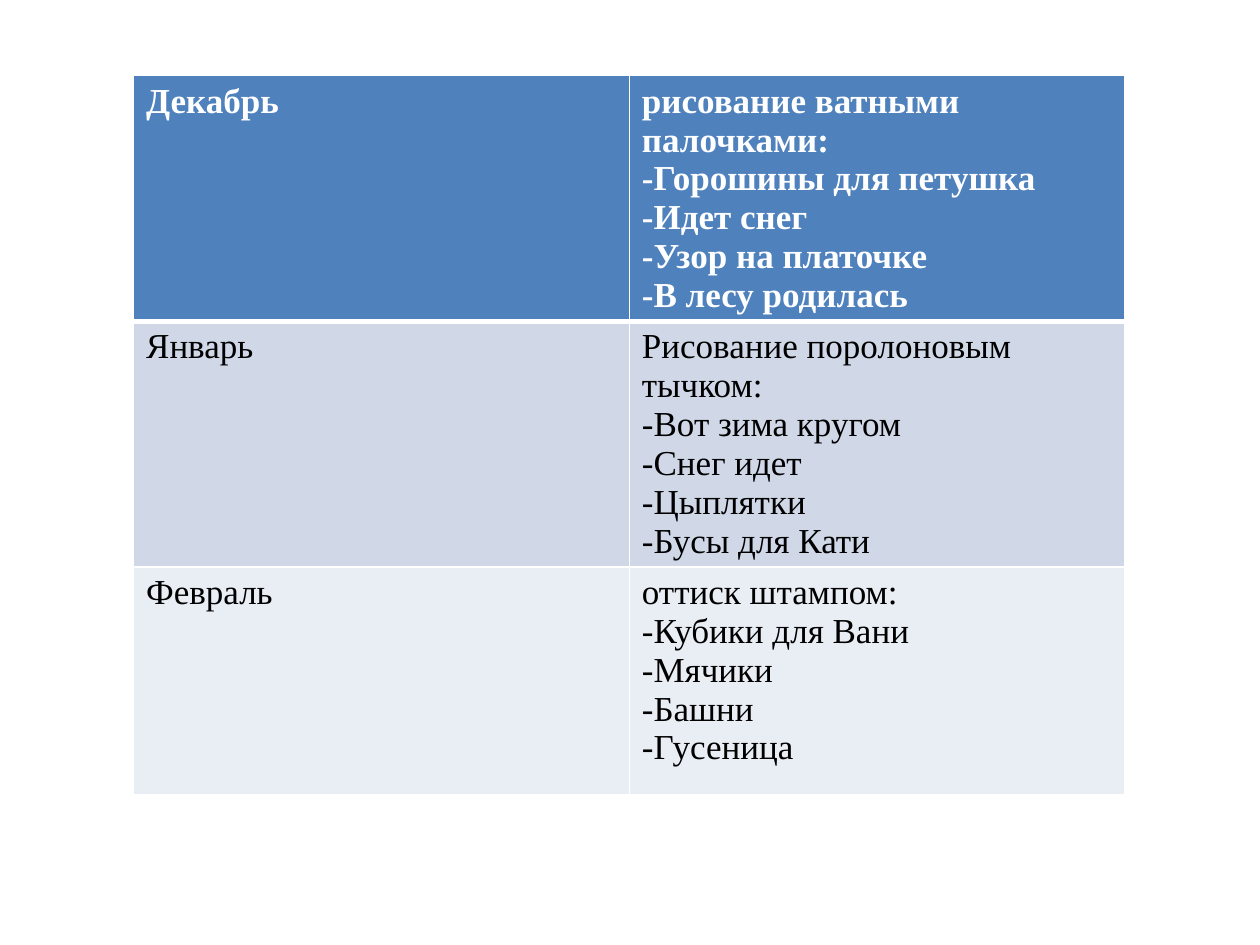
from lxml import etree
from pptx import Presentation
from pptx import util as u
from pptx.dml.color import RGBColor
from pptx.oxml.ns import qn

WHITE = RGBColor(0xFF, 0xFF, 0xFF)
BLACK = RGBColor(0x00, 0x00, 0x00)
HEADER_BLUE = RGBColor(0x4F, 0x81, 0xBD)
BAND_DARK = RGBColor(0xD0, 0xD8, 0xE8)
BAND_LIGHT = RGBColor(0xE9, 0xED, 0xF4)

BASE_FONT = {"name": "Times New Roman", "size": u.Pt(20)}
THIN, THICK = 1, 3

# Month, technique with its drawing topics
MONTH_PLAN = [
    ("Декабрь", ["рисование ватными палочками:", "-Горошины для петушка",
                 "-Идет снег", "-Узор на платочке", "-В лесу родилась"]),
    ("Январь", ["Рисование поролоновым тычком:", "-Вот зима кругом",
                "-Снег идет", "-Цыплятки", "-Бусы для Кати"]),
    ("Февраль", ["оттиск штампом:", "-Кубики для Вани", "-Мячики",
                 "-Башни", "-Гусеница"]),
]

# Fill, text colour, bold, top and bottom border widths of each row
ROW_STYLES = [
    (HEADER_BLUE, WHITE, True, THIN, THICK),
    (BAND_DARK, BLACK, False, THICK, THIN),
    (BAND_LIGHT, BLACK, False, THIN, THIN),
]


def set_borders(cell, top, bottom):
    properties = cell._tc.get_or_add_tcPr()
    widths = {"a:lnL": THIN, "a:lnR": THIN, "a:lnT": top, "a:lnB": bottom}
    for tag, width in widths.items():
        border = etree.SubElement(properties, qn(tag), w=str(u.Pt(width)))
        fill = etree.SubElement(border, qn("a:solidFill"))
        etree.SubElement(fill, qn("a:srgbClr"), val=str(WHITE))


def fill_cell(cell, lines, style):
    background, colour, bold, top, bottom = style
    set_borders(cell, top, bottom)
    cell.fill.solid()
    cell.fill.fore_color.rgb = background
    cell.text_frame.text = "\n".join(lines)
    for paragraph in cell.text_frame.paragraphs:
        for run in paragraph.runs:
            for attribute, value in {**BASE_FONT, "bold": bold}.items():
                setattr(run.font, attribute, value)
            run.font.color.rgb = colour


def add_month_table(slide, left, top, width, height):
    plan = slide.shapes.add_table(len(MONTH_PLAN), 2, left, top, width, height).table
    for row, (month, topics), style in zip(plan.rows, MONTH_PLAN, ROW_STYLES):
        month_cell, topics_cell = row.cells
        fill_cell(month_cell, [month], style)
        fill_cell(topics_cell, topics, style)


def main():
    presentation = Presentation()
    presentation.slide_width = u.Inches(10)
    presentation.slide_height = u.Inches(7.5)
    slide = presentation.slides.add_slide(presentation.slide_layouts[6])

    # Winter months; rows grow to fit their text
    add_month_table(slide, u.Inches(1.06), u.Inches(0.6),
                    u.Inches(7.87), u.Inches(5.43))
    presentation.save("out.pptx")


if __name__ == "__main__":
    main()
